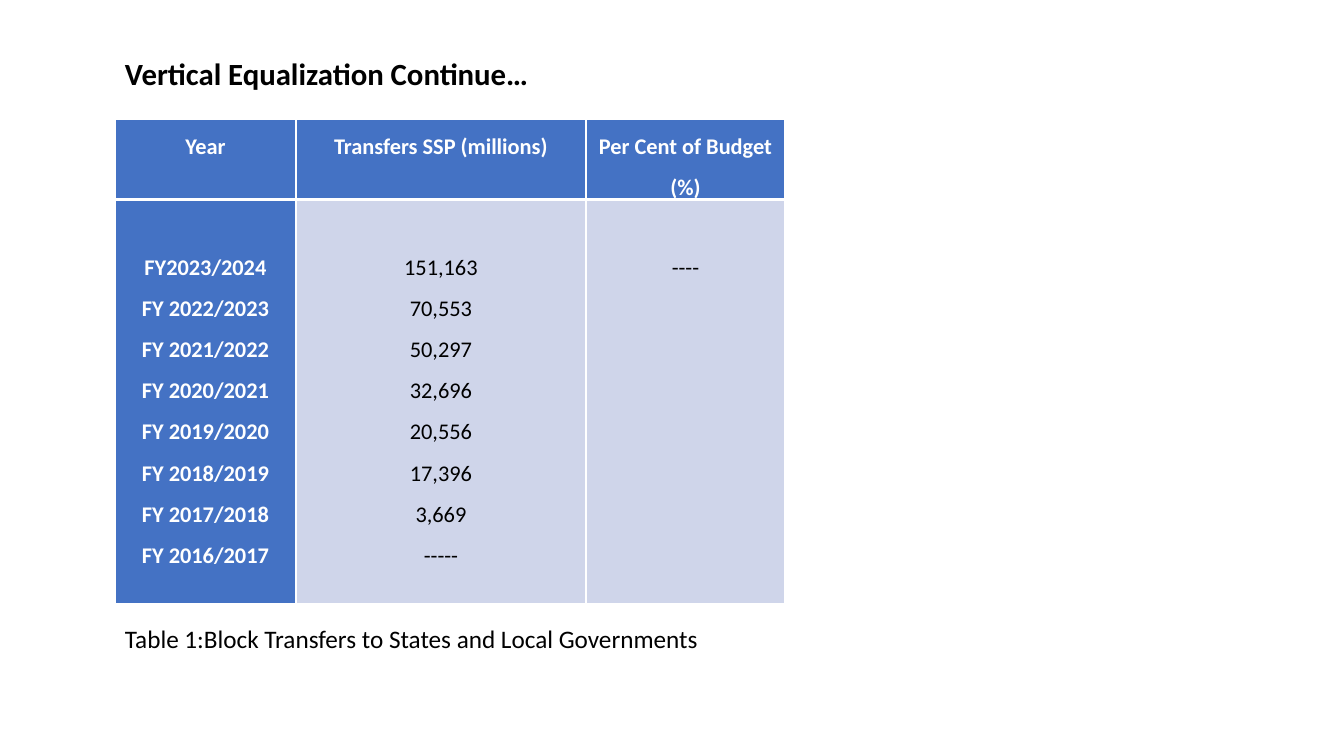
import pptx
import pptx.util
import pptx.dml.color
import pptx.enum.text
import pptx.oxml
import pptx.oxml.ns
import lxml.etree

PIXEL = 914400 / 100.8
FONT = "Calibri"
BLACK, WHITE, BLUE, PALE = "000000", "FFFFFF", "4472C4", "CFD5EA"
LINE_PITCH = 41

HEADINGS = ["Year", "Transfers SSP (millions)", "Per Cent of Budget (%)"]
YEARS = ["FY2023/2024"] + [f"FY {year}/{year + 1}" for year in range(2022, 2015, -1)]
TRANSFERS = ["151,163", "70,553", "50,297", "32,696", "20,556", "17,396", "3,669", "-----"]
PERCENTAGES = ["----"]


def px(length):
    return pptx.util.Emu(round(length * PIXEL))


def color(value):
    return pptx.dml.color.RGBColor.from_string(value)


def write_text(frame, lines, size, ink, bold=False, align=None, spacing=None):
    frame.text = "\n".join(lines)
    for paragraph in frame.paragraphs:
        paragraph.alignment = align
        paragraph.line_spacing = spacing
        for run in paragraph.runs:
            run.font.name = FONT
            run.font.size = pptx.util.Pt(size)
            run.font.bold = bold
            run.font.color.rgb = color(ink)


def add_label(slide, box, text, size, bold=False, wrap=True, spacing=None):
    shape = slide.shapes.add_textbox(*map(px, box))
    frame = shape.text_frame
    frame.word_wrap = wrap
    frame.vertical_anchor = pptx.enum.text.MSO_ANCHOR.MIDDLE
    write_text(frame, [text], size, BLACK, bold, spacing=spacing)


def set_borders(cell, widths):
    properties = cell._tc.get_or_add_tcPr()
    for position, (side, points) in enumerate(widths.items()):
        line = lxml.etree.Element(
            pptx.oxml.ns.qn(f"a:{side}"), w=str(pptx.util.Pt(points)))
        fill = lxml.etree.SubElement(line, pptx.oxml.ns.qn("a:solidFill"))
        lxml.etree.SubElement(fill, pptx.oxml.ns.qn("a:srgbClr"), val=WHITE)
        properties.insert(position, line)


def fill_cell(cell, lines, background, ink, bold, padding, borders):
    cell.fill.solid()
    cell.fill.fore_color.rgb = color(background)
    cell.margin_left = cell.margin_right = px(10)
    cell.margin_top = cell.margin_bottom = px(padding)
    write_text(cell.text_frame, lines, 16, ink, bold,
               pptx.enum.text.PP_ALIGN.CENTER, 1.5)
    set_borders(cell, borders)


def add_transfers_table(slide, box):
    table = slide.shapes.add_table(2, 3, *map(px, box)).table
    table.horz_banding = False
    for column, width in zip(table.columns, (181, 290, 199)):
        column.width = px(width)
    for row, height in zip(table.rows, (77, 398)):
        row.height = px(height)
    heading_borders = {"lnL": 1, "lnR": 1, "lnT": 1, "lnB": 3}
    body_borders = {"lnL": 1, "lnR": 1, "lnT": 3, "lnB": 1}
    for index, lines in enumerate((YEARS, TRANSFERS, PERCENTAGES)):
        fill_cell(table.cell(0, index), [HEADINGS[index]],
                  BLUE, WHITE, True, 0, heading_borders)
        is_year = index == 0
        fill_cell(table.cell(1, index), lines, BLUE if is_year else PALE,
                  WHITE if is_year else BLACK, is_year, LINE_PITCH, body_borders)


def build_slide(presentation):
    slide = presentation.slides.add_slide(presentation.slide_layouts[6])
    left = 115
    add_label(slide, (left, 42, 1159, 68), "Vertical Equalization Continue…",
              22, bold=True, spacing=0.9)
    add_transfers_table(slide, (left, 119, 670, 475))
    add_label(slide, (left, 618, 600, 40),
              "Table 1:Block Transfers to States and Local Governments",
              18, wrap=False)


def main():
    presentation = pptx.Presentation()
    presentation.slide_width = px(1344)
    presentation.slide_height = px(756)
    build_slide(presentation)
    presentation.save("out.pptx")


if __name__ == "__main__":
    main()
